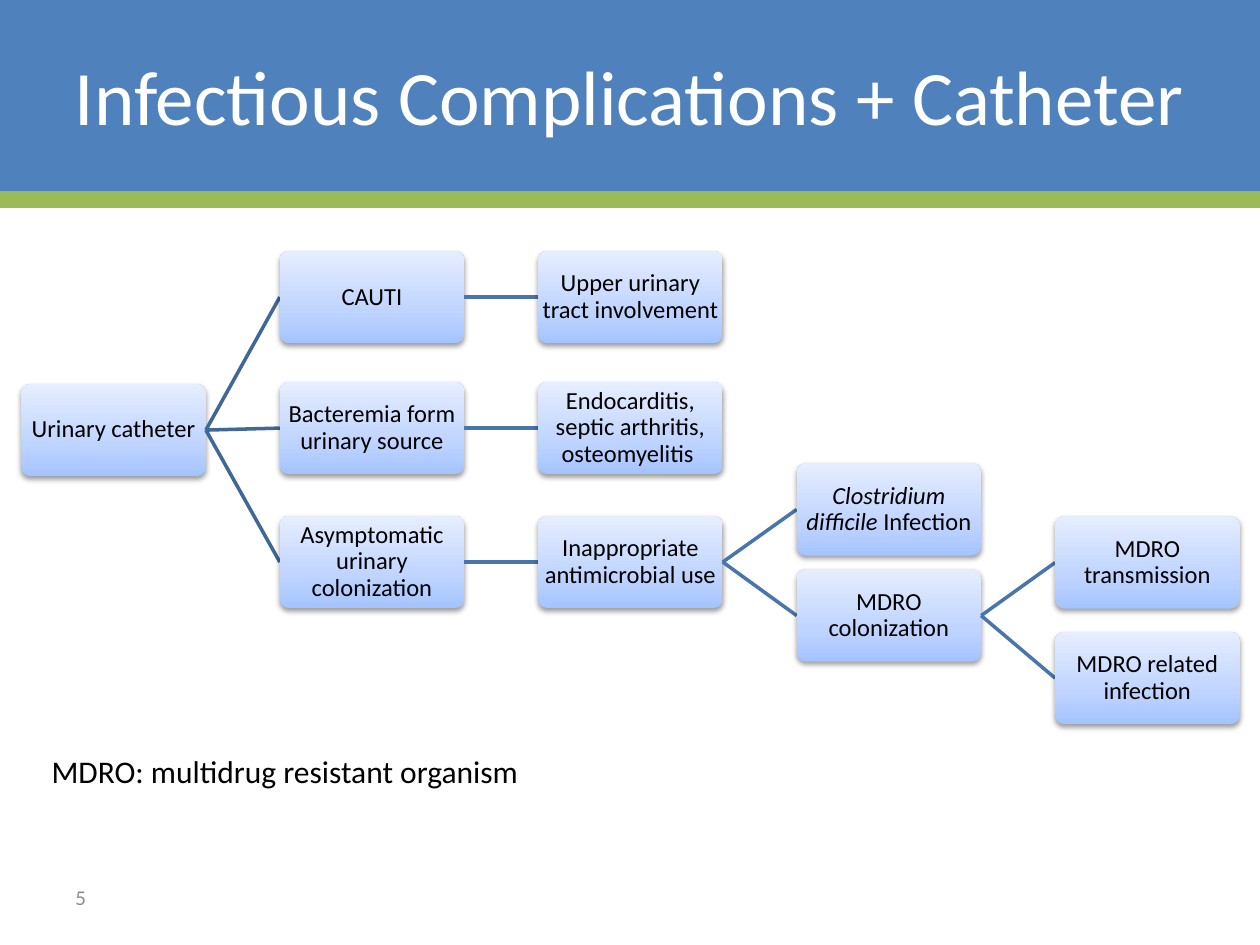
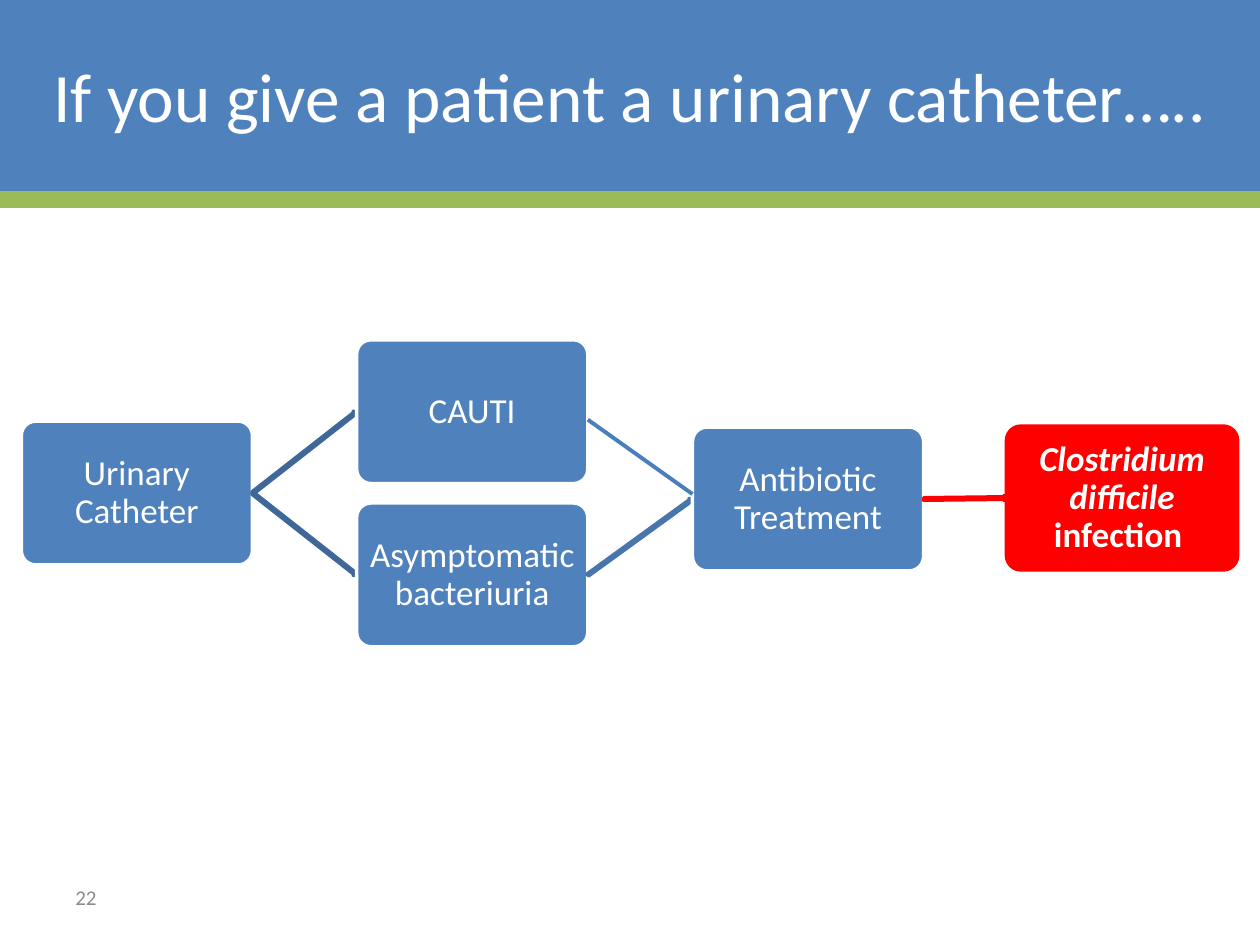
import math
from copy import deepcopy
from dataclasses import dataclass

from lxml import etree
from pptx import Presentation
from pptx import util as u
from pptx.dml.color import RGBColor
from pptx.enum import shapes, text
from pptx.oxml.ns import qn


@dataclass(frozen=True)
class Theme:
    font: str = "Calibri"
    blue: RGBColor = RGBColor(0x4F, 0x81, 0xBD)
    green: RGBColor = RGBColor(0x9B, 0xBB, 0x59)
    white: RGBColor = RGBColor(0xFF, 0xFF, 0xFF)
    black: RGBColor = RGBColor(0, 0, 0)
    grey: RGBColor = RGBColor(0x8C, 0x8C, 0x8C)
    red: RGBColor = RGBColor(0xFF, 0, 0)
    root_link: RGBColor = RGBColor(0x3F, 0x67, 0x97)
    link: RGBColor = RGBColor(0x48, 0x75, 0xAC)
    side_link: RGBColor = RGBColor(0x4B, 0x7E, 0xBC)
    gradient: tuple = ((0, "A4C4FF"), (0.35, "BFD4FF"), (1, "E6EEFF"))
    title_size: float = 44
    long_title_size: float = 39.6
    note_size: float = 18
    number_size: float = 12
    tree_size: float = 14
    flow_size: float = 20


THEME = Theme()
PAGE_WIDTH, PAGE_HEIGHT = 25.4, 19.05
BAND_HEIGHT = 4.02
MARGIN = 0.43


@dataclass(frozen=True)
class NodeStyle:
    """Look of a box; without a fill it gets the gradient and a shadow."""
    width: float
    height: float
    size: float
    color: RGBColor
    fill: RGBColor | None = None
    line: RGBColor | None = None
    bold: bool = False


@dataclass(frozen=True)
class Node:
    label: str
    left: float
    top: float
    style: NodeStyle
    parent: str = ""
    link: RGBColor = THEME.link
    italic: str = ""

    @property
    def entry(self) -> tuple[float, float]:
        return self.left, self.top + self.style.height / 2

    @property
    def exit(self) -> tuple[float, float]:
        return self.left + self.style.width, self.top + self.style.height / 2


TREE = NodeStyle(3.72, 1.86, THEME.tree_size, THEME.black)
FLOW = NodeStyle(4.66, 2.9, THEME.flow_size, THEME.white, THEME.blue, THEME.white)
ALERT = NodeStyle(4.66, 2.9, THEME.flow_size, THEME.white, THEME.red, THEME.red, True)


def tree_node(label: str, column: int, top: float, parent: str = "", **extra) -> Node:
    return Node(label, MARGIN + 5.21 * column, top, TREE, parent, **extra)


CATHETER_TREE = (
    tree_node("Urinary catheter", 0, 7.74),
    tree_node("CAUTI", 1, 5.06, "Urinary catheter", link=THEME.root_link),
    tree_node("Upper urinary tract involvement", 2, 5.06, "CAUTI"),
    tree_node("Bacteremia form urinary source", 1, 7.7, "Urinary catheter",
              link=THEME.root_link),
    tree_node("Endocarditis, septic arthritis, osteomyelitis ", 2, 7.7,
              "Bacteremia form urinary source"),
    tree_node("Asymptomatic urinary colonization", 1, 10.4, "Urinary catheter",
              link=THEME.root_link),
    tree_node("Inappropriate antimicrobial use", 2, 10.4,
              "Asymptomatic urinary colonization"),
    tree_node("Infection", 3, 9.34, "Inappropriate antimicrobial use",
              italic="Clostridium difficile "),
    tree_node("MDRO colonization", 3, 11.48, "Inappropriate antimicrobial use"),
    tree_node("MDRO related infection", 4, 12.74, "MDRO colonization"),
    tree_node("MDRO transmission", 4, 10.41, "MDRO colonization"),
)
CATHETER_FLOW = (
    Node("Urinary Catheter", MARGIN, 8.49, FLOW),
    Node("CAUTI", 7.19, 6.85, FLOW, "Urinary Catheter", THEME.root_link),
    Node("Asymptomatic bacteriuria", 7.19, 10.14, FLOW, "Urinary Catheter",
         THEME.root_link),
    Node("Antibiotic Treatment", 13.96, 8.61, FLOW, "Asymptomatic bacteriuria"),
    Node("infection ", 20.29, 8.59, ALERT, "Antibiotic Treatment", THEME.red,
         "Clostridium difficile "),
)


def set_font(para, size: float, color: RGBColor, bold: bool = False) -> None:
    font = para.font
    font.name, font.size, font.bold = THEME.font, u.Pt(size), bold
    font.color.rgb = color


def add_text(page, words: str, at: tuple, size: float, color: RGBColor,
             align=text.PP_ALIGN.LEFT, wrap: bool = True) -> None:
    frame = page.shapes.add_textbox(*map(u.Cm, at)).text_frame
    frame.word_wrap = wrap
    frame.vertical_anchor = text.MSO_ANCHOR.MIDDLE
    para = frame.paragraphs[0]
    para.text, para.alignment = words, align
    set_font(para, size, color)


def add_line(page, start: tuple, end: tuple, color: RGBColor, width: float = 2) -> None:
    line = page.shapes.add_connector(shapes.MSO_CONNECTOR.STRAIGHT,
                                     *map(u.Cm, (*start, *end)))
    line.line.color.rgb, line.line.width = color, u.Pt(width)
    etree.SubElement(line._element.spPr, qn("a:effectLst"))


def add_thin_arrow(page, start: tuple, end: tuple, color: RGBColor) -> None:
    """Lay a narrow block arrow along the line from start to end."""
    across, down = end[0] - start[0], end[1] - start[1]
    length, thickness = math.hypot(across, down), 0.1
    arrow = page.shapes.add_shape(
        shapes.MSO_SHAPE.RIGHT_ARROW,
        u.Cm((start[0] + end[0] - length) / 2),
        u.Cm((start[1] + end[1] - thickness) / 2), u.Cm(length), u.Cm(thickness))
    arrow.rotation = math.degrees(math.atan2(down, across))
    arrow.shadow.inherit = False
    arrow.fill.background()
    arrow.line.color.rgb, arrow.line.width = color, u.Pt(2)


def add_gradient_and_shadow(box) -> None:
    box.fill.gradient()
    box.fill.gradient_angle = 90
    properties = box._element.spPr
    first_stop = properties.find(".//" + qn("a:gs"))
    first_stop.addnext(deepcopy(first_stop))
    for stop, (position, color) in zip(box.fill.gradient_stops, THEME.gradient):
        stop.position, stop.color.rgb = position, RGBColor.from_string(color)
    shadow = etree.SubElement(
        properties.find(qn("a:effectLst")), qn("a:outerShdw"),
        blurRad=str(u.Pt(3.1)), dist=str(u.Pt(1.6)), dir="5400000", rotWithShape="0")
    black = etree.SubElement(shadow, qn("a:srgbClr"), val=str(THEME.black))
    etree.SubElement(black, qn("a:alpha"), val="38000")


def add_node(page, node: Node) -> None:
    style = node.style
    box = page.shapes.add_shape(
        shapes.MSO_SHAPE.ROUNDED_RECTANGLE,
        *map(u.Cm, (node.left, node.top, style.width, style.height)))
    box.adjustments[0] = 0.1
    box.shadow.inherit = False
    if style.fill is None:
        add_gradient_and_shadow(box)
        box.line.fill.background()
    else:
        box.fill.solid()
        box.fill.fore_color.rgb = style.fill
        box.line.color.rgb, box.line.width = style.line, u.Pt(2)
    frame = box.text_frame
    frame.word_wrap = True
    frame.vertical_anchor = text.MSO_ANCHOR.MIDDLE
    frame.margin_left = frame.margin_right = frame.margin_top = frame.margin_bottom = 0
    para = frame.paragraphs[0]
    para.alignment, para.line_spacing = text.PP_ALIGN.CENTER, 0.9
    set_font(para, style.size, style.color, style.bold)
    if node.italic:
        span = para.add_run()
        span.text, span.font.italic = node.italic, True
    para.add_run().text = node.label


def add_diagram(page, nodes: tuple, add_link) -> dict:
    """Draw each node after the link from its parent; return nodes by label."""
    by_label = {node.label: node for node in nodes}
    for node in nodes:
        if node.parent:
            add_link(page, by_label[node.parent].exit, node.entry, node.link)
        add_node(page, node)
    return by_label


def add_page(deck, title: str, title_size: float, number: int):
    page = deck.slides.add_slide(deck.slide_layouts[6])
    band = page.shapes.add_shape(shapes.MSO_SHAPE.RECTANGLE, 0, 0,
                                 u.Cm(PAGE_WIDTH), u.Cm(BAND_HEIGHT))
    band.shadow.inherit = False
    band.fill.solid()
    band.fill.fore_color.rgb = THEME.blue
    band.line.fill.background()
    add_line(page, (0, BAND_HEIGHT), (PAGE_WIDTH, BAND_HEIGHT), THEME.green, 10)
    add_text(page, title, (0, 0, PAGE_WIDTH, 3.81), title_size, THEME.white,
             text.PP_ALIGN.CENTER)
    add_text(page, str(number), (1.27, 17.58, 5.92, 1.01), THEME.number_size, THEME.grey)
    return page


def main() -> None:
    deck = Presentation()
    deck.slide_width, deck.slide_height = u.Cm(PAGE_WIDTH), u.Cm(PAGE_HEIGHT)

    page = add_page(deck, "Infectious Complications + Catheter", THEME.title_size, 5)
    add_diagram(page, CATHETER_TREE, add_line)
    add_text(page, "MDRO: multidrug resistant organism", (0.79, 15.04, 10.31, 1.02),
             THEME.note_size, THEME.black, wrap=False)

    page = add_page(deck, "If you give a patient a urinary catheter…..",
                    THEME.long_title_size, 22)
    flow = add_diagram(page, CATHETER_FLOW, add_thin_arrow)
    treatment_left, _ = flow["Antibiotic Treatment"].entry
    add_line(page, (flow["CAUTI"].exit[0], 8.46), (treatment_left, 9.96),
             THEME.side_link, 2.25)

    deck.save("out.pptx")


if __name__ == "__main__":
    main()
